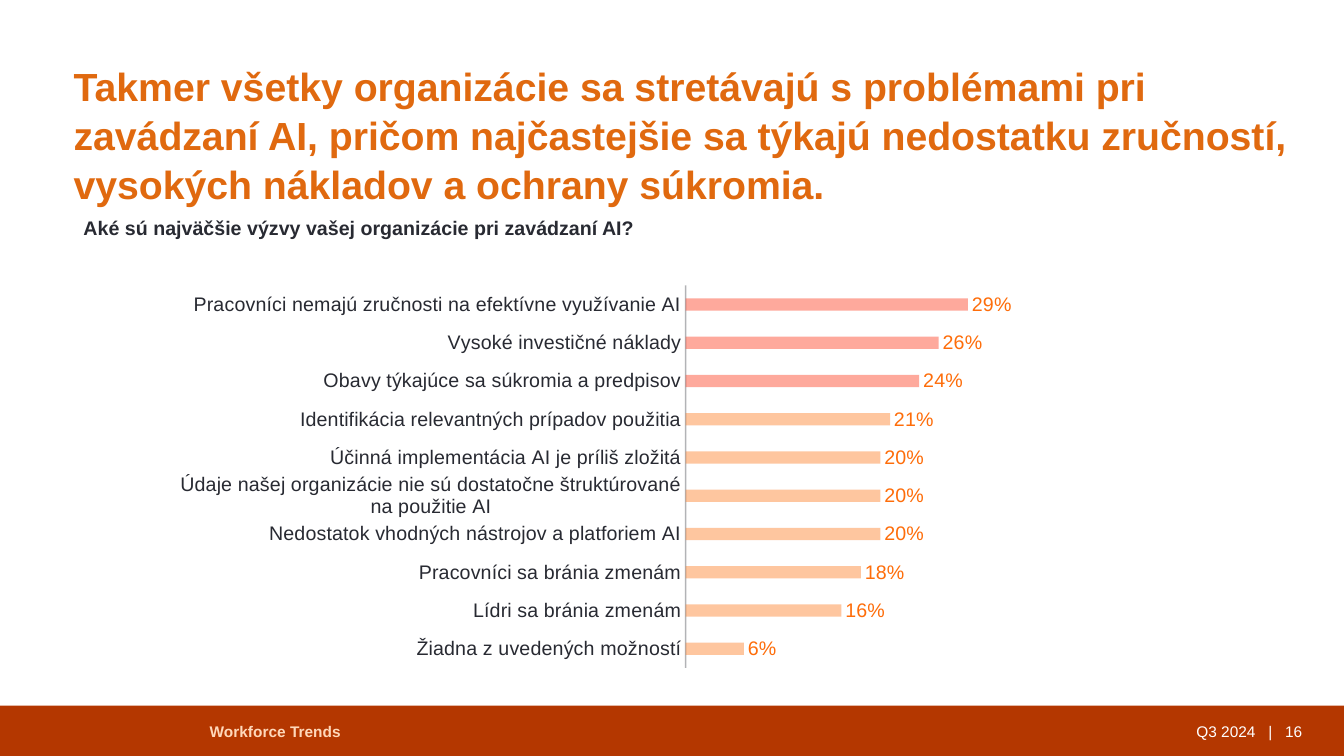
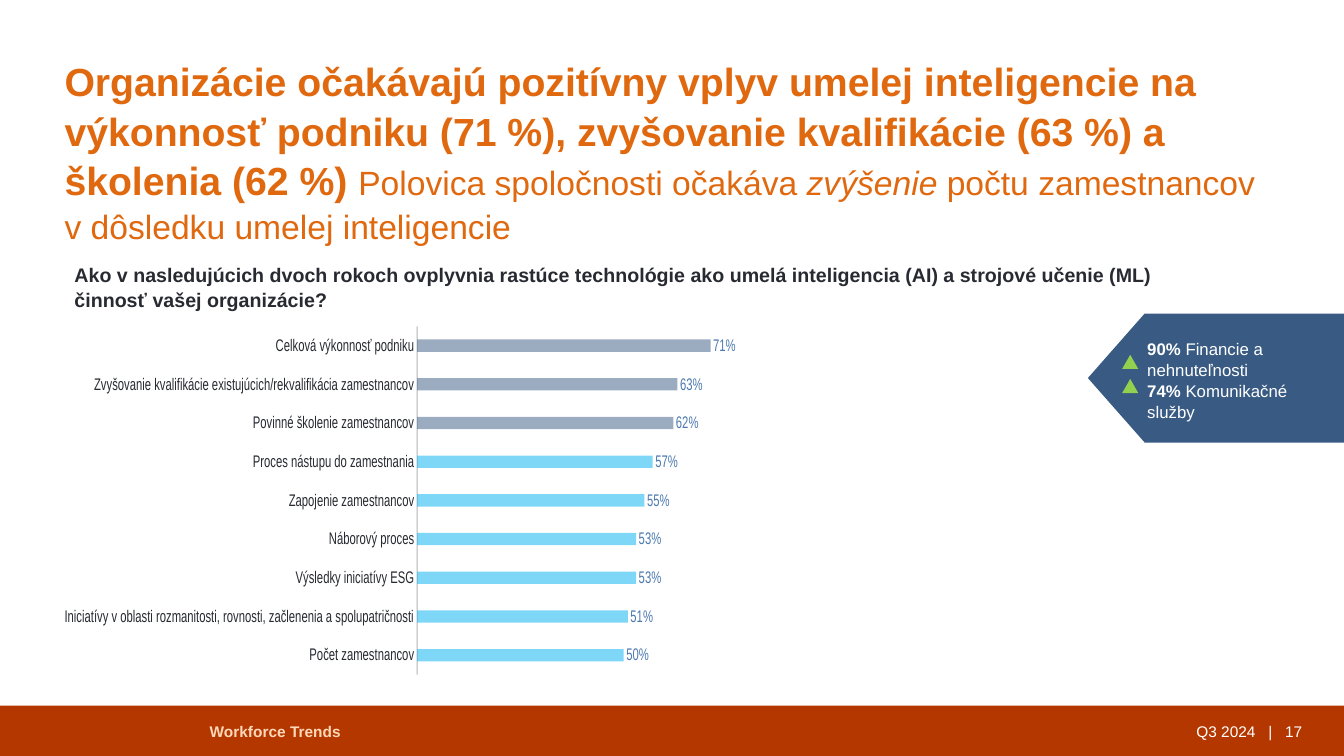
from lxml import etree
from pptx import Presentation
from pptx.chart.data import CategoryChartData
from pptx.dml.color import RGBColor
from pptx.enum.chart import XL_CHART_TYPE as ChartType
from pptx.enum.chart import XL_LABEL_POSITION as LabelPosition
from pptx.enum.chart import XL_TICK_MARK as TickMark
from pptx.enum.shapes import MSO_SHAPE as Shape
from pptx.enum.text import MSO_ANCHOR as Anchor
from pptx.enum.text import MSO_AUTO_SIZE as AutoSize
from pptx.enum.text import PP_ALIGN as Align
from pptx.oxml.ns import qn
from pptx.util import Pt

PX = 9144  # 100 px to the inch
FONT = "Arial"
COLORS = {
    "band": "B43700", "band_label": "FFD8BA", "white": "FFFFFF",
    "title": "E0690F", "text": "282A32", "axis": "67696F",
    "red": "FE2202", "orange": "FE6D0A",
    "navy": "395B83", "sky": "00B0F0", "blue": "4C79AF",
    "green": "92D050",
}


def write(frame, paragraphs, color, margins=True, align=Align.LEFT,
          anchor=Anchor.TOP, spacing=1.05):
    """Fill a text frame; each run is (text, size, style letters)."""
    frame.word_wrap = True
    frame.auto_size = AutoSize.NONE
    frame.vertical_anchor = anchor
    if not margins:
        frame.margin_left = frame.margin_right = 0
        frame.margin_top = frame.margin_bottom = 0
    for index, runs in enumerate(paragraphs):
        paragraph = frame.add_paragraph() if index else frame.paragraphs[0]
        paragraph.alignment = align
        paragraph.line_spacing = spacing
        for text, size, style in runs:
            run = paragraph.add_run()
            run.text = text
            run.font.name = FONT
            run.font.size = Pt(size)
            run.font.bold = "b" in style
            run.font.italic = "i" in style
            run.font.color.rgb = RGBColor.from_string(COLORS[color])


def add_shape(slide, kind, box, color):
    shape = slide.shapes.add_shape(kind, *[value * PX for value in box])
    shape.shadow.inherit = False
    shape.fill.solid()
    shape.fill.fore_color.rgb = RGBColor.from_string(COLORS[color])
    shape.line.fill.background()
    return shape


PAGES = [
    {
        "number": 16,
        "title_box": (73, 59, 1214, 96),
        "title": [("Takmer všetky organizácie sa stretávajú s problémami pri zavádzaní AI, "
                   "pričom najčastejšie sa týkajú nedostatku zručností, vysokých nákladov "
                   "a ochrany súkromia.", 28, "b")],
        "question_box": (73, 208, 986, 34),
        "question": "Aké sú najväčšie výzvy vašej organizácie pri zavádzaní AI?",
        "chart_box": (158, 195, 1044, 534),
        "plot": {"x": 0.5, "y": 0.165, "w": 0.37, "h": 0.711},
        "maximum": 0.4, "size": 14, "opacity": 39,
        "top_color": "red", "bar_color": "orange", "label_color": "orange",
        "values": [
            ("Pracovníci nemajú zručnosti na efektívne využívanie AI", 0.29),
            ("Vysoké investičné náklady", 0.26),
            ("Obavy týkajúce sa súkromia a predpisov", 0.24),
            ("Identifikácia relevantných prípadov použitia", 0.21),
            ("Účinná implementácia AI je príliš zložitá", 0.2),
            ("Údaje našej organizácie nie sú dostatočne štruktúrované na použitie AI", 0.2),
            ("Nedostatok vhodných nástrojov a platforiem AI", 0.2),
            ("Pracovníci sa bránia zmenám", 0.18),
            ("Lídri sa bránia zmenám", 0.16),
            ("Žiadna z uvedených možností", 0.06),
        ],
    },
    {
        "number": 17,
        "title_box": (64, 55, 1181, 50),
        "title": [("Organizácie očakávajú pozitívny vplyv umelej inteligencie na výkonnosť "
                   "podniku (71 %), zvyšovanie kvalifikácie (63 %) a školenia (62 %) ", 28, "b"),
                  ("Polovica spoločnosti očakáva ", 24, ""),
                  ("zvýšenie ", 24, "i"),
                  ("počtu zamestnancov v dôsledku umelej inteligencie", 24, "")],
        "question_box": (64, 255, 1162, 57),
        "question": "Ako v nasledujúcich dvoch rokoch ovplyvnia rastúce technológie ako umelá "
                    "inteligencia (AI) a strojové učenie (ML) činnosť vašej organizácie?",
        "chart_box": (64, 245, 1065, 486),
        "plot": {"x": 0.001, "y": 0.162, "w": 0.458, "h": 0.711},
        "maximum": 0.8, "size": 12, "opacity": 50,
        "top_color": "navy", "bar_color": "sky", "label_color": "blue",
        "values": [
            ("Celková výkonnosť podniku", 0.71),
            ("Zvyšovanie kvalifikácie existujúcich/rekvalifikácia zamestnancov", 0.63),
            ("Povinné školenie zamestnancov", 0.62),
            ("Proces nástupu do zamestnania", 0.57),
            ("Zapojenie zamestnancov", 0.55),
            ("Náborový proces", 0.53),
            ("Výsledky iniciatívy ESG", 0.53),
            ("Iniciatívy v oblasti rozmanitosti, rovnosti, začlenenia a spolupatričnosti", 0.51),
            ("Počet zamestnancov", 0.5),
        ],
    },
]

presentation = Presentation()
presentation.slide_width = 1333 * PX
presentation.slide_height = 750 * PX
layout = presentation.slide_layouts[5]

for page in PAGES:
    slide = presentation.slides.add_slide(layout)

    # Footer: the band and its label live on the layout, the number on the slide
    if page is PAGES[0]:
        band = add_shape(slide, Shape.RECTANGLE, (0, 700, 1333, 50), "band")
        label = slide.shapes.add_textbox(208 * PX, 716 * PX, 400 * PX, 19 * PX)
        write(label.text_frame, [[("Workforce Trends", 11, "b")]], "band_label",
              margins=False, anchor=Anchor.MIDDLE, spacing=1.0)
        for shape in (band, label):
            layout.shapes._spTree.append(shape._element)
    footer = slide.shapes.add_textbox(1078 * PX, 716 * PX, 214 * PX, 19 * PX)
    write(footer.text_frame, [[(f"Q3 2024   |   {page['number']}", 11, "")]], "white",
          margins=False, align=Align.RIGHT, anchor=Anchor.MIDDLE, spacing=1.0)

    # Bar chart
    data = CategoryChartData(number_format="0%")
    data.categories = [name for name, value in page["values"]]
    data.add_series("Series 1", [value for name, value in page["values"]])
    chart = slide.shapes.add_chart(
        ChartType.BAR_CLUSTERED, *[value * PX for value in page["chart_box"]], data).chart
    chart.has_title = False
    chart.has_legend = False
    chart.font.name = FONT
    chart.font.size = Pt(10)
    chart.font.color.rgb = RGBColor.from_string(COLORS["text"])

    # Fixed inner plot area
    plot_area = chart._chartSpace.chart.plotArea
    for old_layout in plot_area.findall(qn("c:layout")):
        plot_area.remove(old_layout)
    plot_layout = etree.Element(qn("c:layout"))
    manual = etree.SubElement(plot_layout, qn("c:manualLayout"))
    settings = {"layoutTarget": "inner", "xMode": "edge", "yMode": "edge", **page["plot"]}
    for tag, value in settings.items():
        etree.SubElement(manual, qn(f"c:{tag}")).set("val", str(value))
    plot_area.insert(0, plot_layout)

    # Axes
    category_axis = chart.category_axis
    category_axis.reverse_order = True
    category_axis.has_major_gridlines = False
    category_axis.major_tick_mark = TickMark.NONE
    category_axis.tick_labels.font.name = FONT
    category_axis.tick_labels.font.size = Pt(page["size"])
    category_axis.tick_labels.font.color.rgb = RGBColor.from_string(COLORS["text"])
    category_axis.format.line.width = Pt(1)
    category_axis.format.line.color.rgb = RGBColor.from_string(COLORS["axis"])
    value_axis = chart.value_axis
    value_axis.visible = False
    value_axis.has_major_gridlines = False
    value_axis.minimum_scale = 0
    value_axis.maximum_scale = page["maximum"]

    # Bars: the three leading answers stand out
    plot = chart.plots[0]
    plot.gap_width = 214
    plot.vary_by_categories = False
    series = plot.series[0]
    series.invert_if_negative = False
    fills = [(series.format.fill, page["bar_color"])]
    fills += [(series.points[index].format.fill, page["top_color"]) for index in range(3)]
    for fill, color in fills:
        fill.solid()
        fill.fore_color.rgb = RGBColor.from_string(COLORS[color])

    # Transparency of bars and axis line
    bar_colors = series._element.xpath("./c:spPr//a:srgbClr | ./c:dPt//a:srgbClr")
    axis_colors = category_axis._element.xpath("./c:spPr//a:srgbClr")
    for elements, opacity in ((bar_colors, page["opacity"]), (axis_colors, 50)):
        for element in elements:
            etree.SubElement(element, qn("a:alpha")).set("val", str(opacity * 1000))

    # Value labels
    labels = series.data_labels
    labels.show_value = True
    labels.position = LabelPosition.OUTSIDE_END
    labels.number_format = "0%"
    labels.number_format_is_linked = False
    labels.font.name = FONT
    labels.font.size = Pt(page["size"])
    labels.font.color.rgb = RGBColor.from_string(COLORS[page["label_color"]])

    # Title in front of the chart, then the survey question
    title = slide.shapes.title
    title.left, title.top, title.width, title.height = [
        value * PX for value in page["title_box"]]
    write(title.text_frame, [page["title"]], "title", margins=False)
    slide.shapes._spTree.append(title._element)
    question = slide.shapes.add_textbox(*[value * PX for value in page["question_box"]])
    write(question.text_frame, [[(page["question"], 14, "b")]], "text")

# Callout with the leading industries on the last slide
callout = add_shape(slide, Shape.PENTAGON, (1079, 311, 254, 128), "navy")
callout.adjustments[0] = 0.44
callout.rotation = 180
industries = slide.shapes.add_textbox(1128 * PX, 330 * PX, 192 * PX, 91 * PX)
write(industries.text_frame, [
    [("90% ", 12, "b"), ("Financie a nehnuteľnosti", 12, "")],
    [("74% ", 12, "b"), ("Komunikačné služby", 12, "")],
], "white")
for top in (352, 376):
    add_shape(slide, Shape.ISOSCELES_TRIANGLE, (1113, top, 16, 14), "green")

presentation.save("out.pptx")
